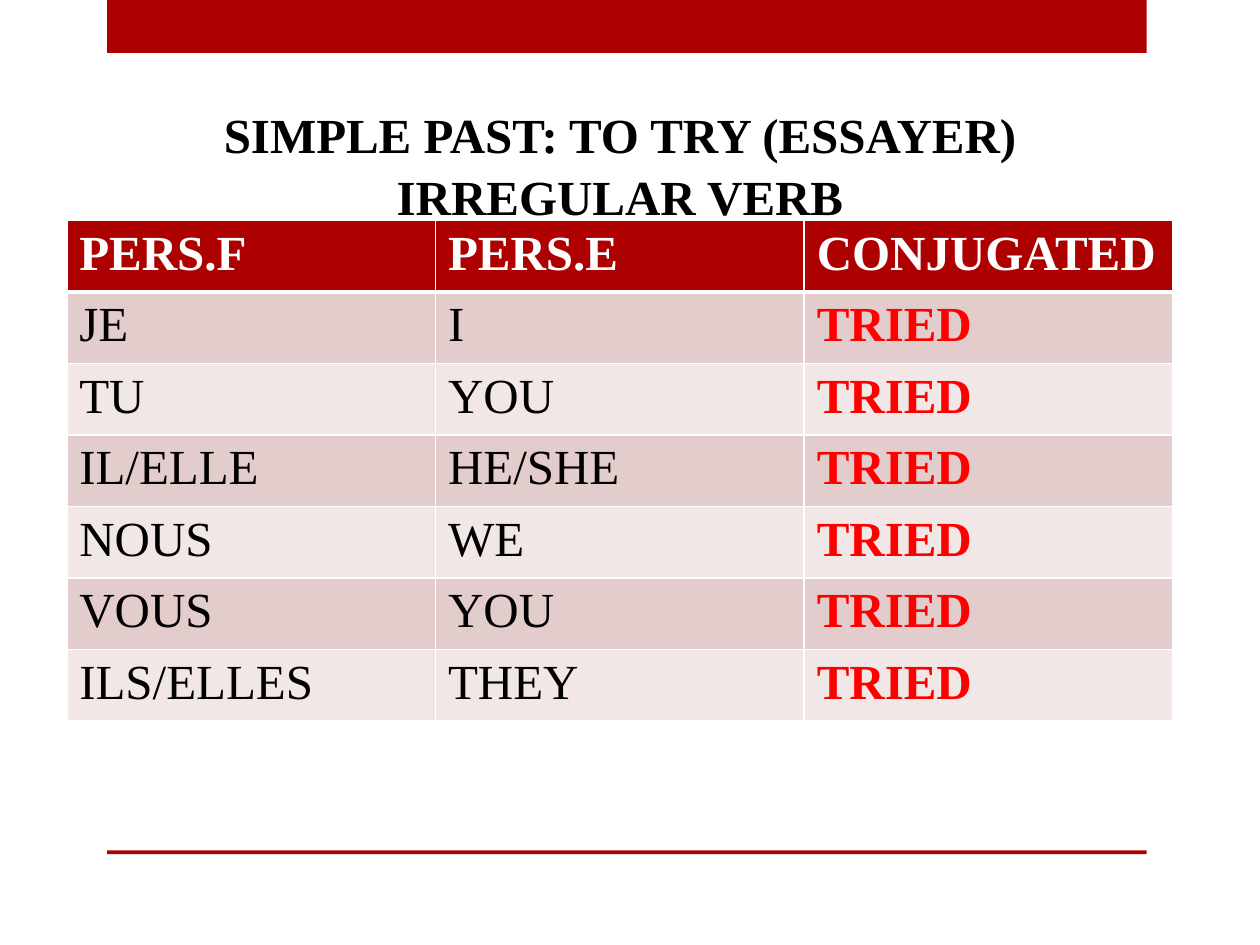
from typing import NamedTuple

from lxml.etree import SubElement as Sub
from pptx import Presentation
from pptx.dml.color import RGBColor
from pptx.enum.shapes import MSO_SHAPE as Shape
from pptx.enum.text import PP_ALIGN as Align
from pptx.oxml.ns import qn
from pptx.util import Inches, Pt

FONT = "Times New Roman"
RED, WHITE, BLACK, BRIGHT = "AD0101", "FFFFFF", "000000", "FF0000"
BANDS = ("E3CCCC", "F1E7E7")


class Bar(NamedTuple):
    top: float
    height: float


class Verb(NamedTuple):
    french: str
    english: str
    past: str = "TRIED"


BARS = [Bar(0, 0.42), Bar(6.75, 0.03)]
HEAD = Verb("PERS.F", "PERS.E", "CONJUGATED")
VERBS = [
    Verb("JE", "I"),
    Verb("TU", "YOU"),
    Verb("IL/ELLE", "HE/SHE"),
    Verb("NOUS", "WE"),
    Verb("VOUS", "YOU"),
    Verb("ILS/ELLES", "THEY"),
]


def paint(target, color: str) -> None:
    """Give a fill or a font a solid colour."""
    if hasattr(target, "solid"):
        target.solid()
        target.fore_color.rgb = RGBColor.from_string(color)
    else:
        target.color.rgb = RGBColor.from_string(color)


def style(para, color: str, bold: bool) -> None:
    for run in para.runs:
        run.font.name, run.font.size, run.font.bold = FONT, Pt(28), bold
        paint(run.font, color)


def draw_bar(slide, bar: Bar) -> None:
    shape = slide.shapes.add_shape(
        Shape.RECTANGLE, Inches(0.85), Inches(bar.top), Inches(8.25), Inches(bar.height))
    shape.shadow.inherit = False
    paint(shape.fill, RED)
    shape.line.fill.background()


def draw_title(slide, text: str) -> None:
    box = slide.shapes.add_textbox(Inches(0.59), Inches(0.76), Inches(8.66), Inches(1.82))
    frame = box.text_frame
    frame.word_wrap = True
    frame.text = text
    para = frame.paragraphs[0]
    para.alignment, para.line_spacing = Align.CENTER, 1.05
    style(para, BLACK, True)


def edge(cell, top: float, bottom: float) -> None:
    """Add white borders, which must come before the cell's fill."""
    props = cell._tc.get_or_add_tcPr()
    for side, width in (("L", 1), ("R", 1), ("T", top), ("B", bottom)):
        line = Sub(props, qn(f"a:ln{side}"), w=str(Pt(width)))
        Sub(Sub(line, qn("a:solidFill")), qn("a:srgbClr"), val=WHITE)


def draw_table(slide, rows: list[Verb]) -> None:
    table = slide.shapes.add_table(
        len(rows), len(HEAD), Inches(0.53), Inches(1.75), Inches(8.78), Inches(3.97)).table
    for r, row in enumerate(rows):
        for c, text in enumerate(row):
            cell = table.cell(r, c)
            cell.text = text
            edge(cell, 3 if r == 1 else 1, 3 if r == 0 else 1)
            last = c == len(row) - 1
            paint(cell.fill, RED if r == 0 else BANDS[(r - 1) % 2])
            color = WHITE if r == 0 else BRIGHT if last else BLACK
            style(cell.text_frame.paragraphs[0], color, r == 0 or last)


def main() -> None:
    deck = Presentation()
    deck.slide_width, deck.slide_height = Inches(10), Inches(7.5)
    slide = deck.slides.add_slide(deck.slide_layouts[6])
    paint(slide.background.fill, WHITE)

    # Bars at the top and bottom
    for bar in BARS:
        draw_bar(slide, bar)

    # Title and conjugation table
    draw_title(slide, "SIMPLE PAST: TO TRY (ESSAYER)\vIRREGULAR VERB")
    draw_table(slide, [HEAD, *VERBS])
    deck.save("out.pptx")


if __name__ == "__main__":
    main()
